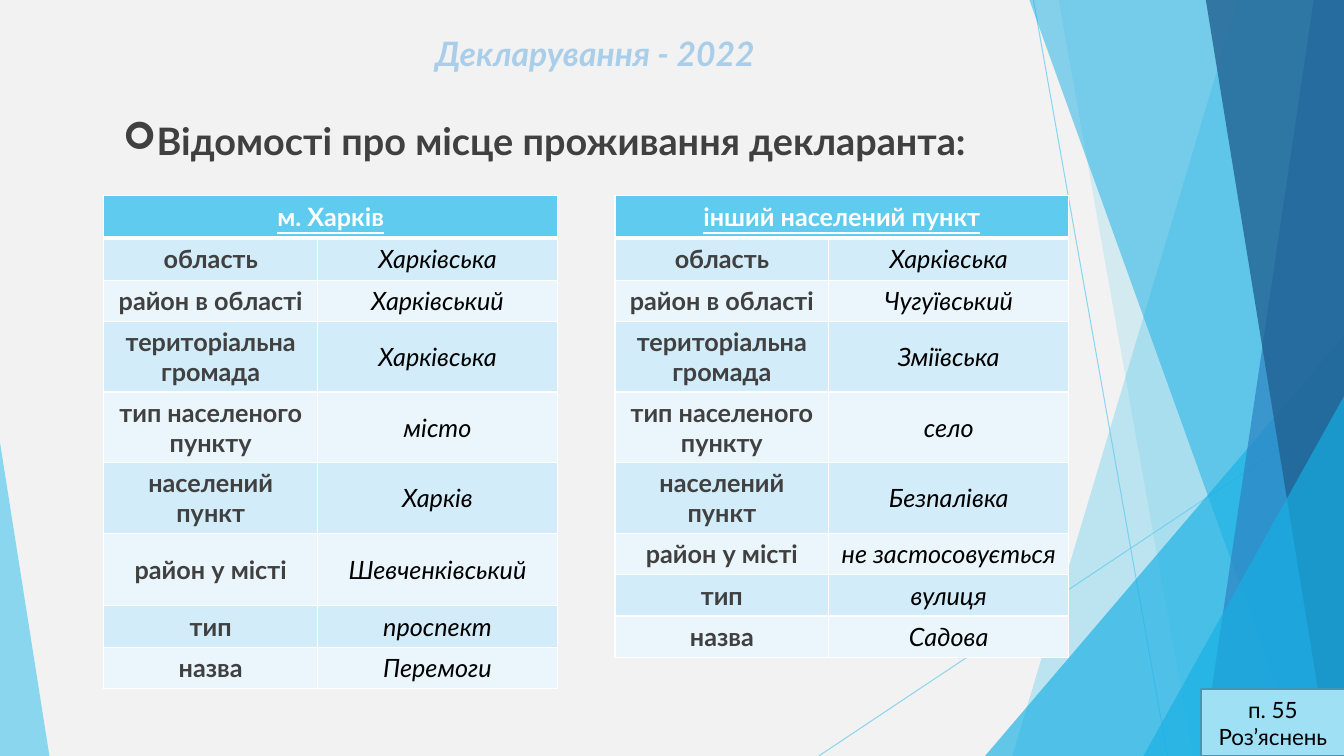
from dataclasses import dataclass

from lxml import etree
from pptx import Presentation
from pptx.dml.color import RGBColor
from pptx.enum import shapes, text
from pptx.oxml import ns
from pptx.util import Inches, Pt


@dataclass(frozen=True)
class Theme:
    """Colours, font and type sizes of the slide."""
    font: str = "Lato"
    paper: str = "F2F2F2"
    sky: str = "5FCBEF"
    azure: str = "17B0E4"
    blue: str = "2E83C3"
    navy: str = "226292"
    pale: str = "A8CEEA"
    ink: str = "404040"
    black: str = "000000"
    white: str = "FFFFFF"
    bands: tuple = ("D2ECF9", "EAF6FC")
    note_fill: str = "9FE0F5"
    note_line: str = "4696B1"
    title: int = 24
    heading: int = 27
    body: int = 18
    note: int = 16


T = Theme()
LABELS = ["область", "район в області", "територіальна громада", "тип населеного пункту",
          "населений пункт", "район у місті", "тип", "назва"]
CITY = ["Харківська", "Харківський", "Харківська", "місто",
        "Харків", "Шевченківський", "проспект", "Перемоги"]
VILLAGE = ["Харківська", "Чугуївський", "Зміївська", "село",
           "Безпалівка", "не застосовується", "вулиця", "Садова"]


def rgb(value):
    """Turn a hex string into a colour."""
    return RGBColor.from_string(value)


def add_xml(parent, tag, **attrs):
    """Append a DrawingML element and return it."""
    return etree.SubElement(parent, ns.qn(tag), {k: str(v) for k, v in attrs.items()})


def write(tf, content, size=T.body, color=T.ink, bold=False, italic=False,
          underline=False, align=text.PP_ALIGN.CENTER):
    """Write one formatted paragraph into a text frame and return it."""
    tf.word_wrap = True
    p = tf.paragraphs[0]
    p.alignment = align
    r = p.add_run()
    r.text = content
    f = r.font
    f.name, f.size, f.bold, f.italic, f.underline = T.font, Pt(size), bold, italic, underline
    f.color.rgb = rgb(color)
    return p


def set_alpha(fill_format, element, color, percent):
    """Give a fill a solid colour with an opacity in percent."""
    fill_format.solid()
    fill_format.fore_color.rgb = rgb(color)
    clr = element.find(".//" + ns.qn("a:srgbClr"))
    add_xml(clr, "a:alpha", val=percent * 1000)


def finish(sp, color, percent):
    """Style a see-through facet without outline or shadow."""
    sp.shadow.inherit = False
    set_alpha(sp.fill, sp._element.spPr, color, percent)
    sp.line.fill.background()


def add_ray(s, x1, y1, x2, y2):
    """Draw one thin background line."""
    ray = s.shapes.add_connector(shapes.MSO_CONNECTOR.STRAIGHT,
                                 Inches(x1), Inches(y1), Inches(x2), Inches(y2))
    ray.line.width = Pt(0.75)
    set_alpha(ray.line.fill, ray._element.spPr, T.sky, 70)
    add_xml(ray._element.spPr, "a:effectLst")


def add_band(s, x, y, w, h, top, bottom, color, percent):
    """Draw a facet from a slanted left edge to the right side of the box."""
    corners = [(x + w, y), (x + w, y + h), (x + bottom, y + h)]
    fb = s.shapes.build_freeform(Inches(x + top), Inches(y), scale=1.0)
    fb.add_line_segments([(Inches(px), Inches(py)) for px, py in corners], close=True)
    finish(fb.convert_to_shape(), color, percent)


def add_corner(s, x, y, w, h, apex, color, percent):
    """Draw a right triangle whose apex lies at the given share of its width."""
    sp = s.shapes.add_shape(shapes.MSO_SHAPE.ISOSCELES_TRIANGLE,
                            Inches(x), Inches(y), Inches(w), Inches(h))
    sp.adjustments[0] = apex
    finish(sp, color, percent)


def add_facets(s, x, y, w, h):
    """Draw the background rays and facets in the given box."""
    right, base = x + w, y + h
    add_ray(s, x + 10.25, y, x + 11.58, base)
    add_ray(s, right, y + 4.03, x + 8.12, base)
    add_band(s, x, y, w, h, 12.28, 10.04, T.sky, 36)
    add_band(s, x, y, w, h, 10.5, 11.83, T.sky, 20)
    add_corner(s, right - 3.56, base - 4.17, 3.56, 4.17, 1, T.azure, 66)
    add_band(s, x, y, w, h, 10.21, 12.91, T.azure, 50)
    add_band(s, x, y, w, h, 13.03, 11.92, T.blue, 70)
    add_band(s, x, y, w, h, 11.96, 13.18, T.navy, 80)
    add_corner(s, right - 1.99, base - 3.57, 1.99, 3.57, 1, T.azure, 66)
    add_corner(s, x, base - 3.11, 0.49, 3.11, 0, T.sky, 70)


def add_title(s, x, y, w, h):
    """Place the slide title."""
    tb = s.shapes.add_textbox(Inches(x), Inches(y), Inches(w), Inches(h))
    write(tb.text_frame, "Декларування - 2022", size=T.title, color=T.pale,
          bold=True, italic=True)


def add_heading(s, x, y, w, h):
    """Place the bulleted heading."""
    tf = s.shapes.add_textbox(Inches(x), Inches(y), Inches(w), Inches(h)).text_frame
    tf.margin_left = tf.margin_right = Inches(0.07)
    tf.margin_top = tf.margin_bottom = Inches(0.04)
    p = write(tf, "Відомості про місце проживання декларанта:", size=T.heading,
              bold=True, align=text.PP_ALIGN.LEFT)
    pPr = p._p.get_or_add_pPr()
    pPr.set("marL", str(Inches(0.38)))
    pPr.set("indent", str(Inches(0.12)))
    add_xml(pPr, "a:buFont", typeface="Wingdings")
    add_xml(pPr, "a:buChar", char="➢")
    tabs = add_xml(pPr, "a:tabLst")
    add_xml(tabs, "a:tab", pos=Inches(0.15), algn="l")


def fill_cell(cell, content, fill, bottom=1, **fmt):
    """Border, fill and write one table cell."""
    tcPr = cell._tc.get_or_add_tcPr()
    for side, width in (("L", 1), ("R", 1), ("T", 1), ("B", bottom)):
        ln = add_xml(tcPr, "a:ln" + side, w=Pt(width))
        add_xml(add_xml(ln, "a:solidFill"), "a:srgbClr", val=T.white)
    cell.fill.solid()
    cell.fill.fore_color.rgb = rgb(fill)
    cell.vertical_anchor = text.MSO_ANCHOR.MIDDLE
    write(cell.text_frame, content, **fmt)


def add_address(s, x, y, w, heading, values, heights):
    """Place an address table with a merged heading row."""
    table = s.shapes.add_table(len(heights), 2, Inches(x), Inches(y), Inches(w),
                               Inches(sum(heights))).table
    table.horz_banding = False
    for col, width in zip(table.columns, (2.12, w - 2.12)):
        col.width = Inches(width)
    for row, height in zip(table.rows, heights):
        row.height = Inches(height)
    table.cell(0, 0).merge(table.cell(0, 1))
    fill_cell(table.cell(0, 0), heading, T.sky, bottom=3, color=T.white,
              bold=True, underline=True)
    for i, (label, value) in enumerate(zip(LABELS, values)):
        band = T.bands[i % 2]
        fill_cell(table.cell(i + 1, 0), label, band, bold=True)
        fill_cell(table.cell(i + 1, 1), value, band, color=T.black, italic=True)


def add_note(s, x, y, w, h):
    """Place the reference note."""
    sp = s.shapes.add_shape(shapes.MSO_SHAPE.RECTANGLE,
                            Inches(x), Inches(y), Inches(w), Inches(h))
    sp.shadow.inherit = False
    sp.fill.solid()
    sp.fill.fore_color.rgb = rgb(T.note_fill)
    sp.line.color.rgb = rgb(T.note_line)
    sp.line.width = Pt(1.5)
    sp.text_frame.vertical_anchor = text.MSO_ANCHOR.MIDDLE
    write(sp.text_frame, "п. 55 Роз’яснень", size=T.note, color=T.black)


def main():
    """Build the slide and save it."""
    prs = Presentation()
    prs.slide_width, prs.slide_height = Inches(13.33), Inches(7.5)
    s = prs.slides.add_slide(prs.slide_layouts[6])
    s.background.fill.solid()
    s.background.fill.fore_color.rgb = rgb(T.paper)
    add_facets(s, 0, 0, 13.33, 7.5)
    add_title(s, 2.29, 0.28, 7.22, 0.29)
    add_heading(s, 0.65, 1.13, 9.54, 0.53)
    top_rows = [0.42, 0.42, 0.41] + [0.7] * 3
    add_address(s, 1.03, 1.94, 4.5, "м. Харків", CITY, top_rows + [0.72, 0.41, 0.41])
    add_address(s, 6.1, 1.94, 4.5, "інший населений пункт", VILLAGE, top_rows + [0.41] * 3)
    add_note(s, 11.91, 6.84, 1.43, 0.66)
    prs.save("out.pptx")


if __name__ == "__main__":
    main()
